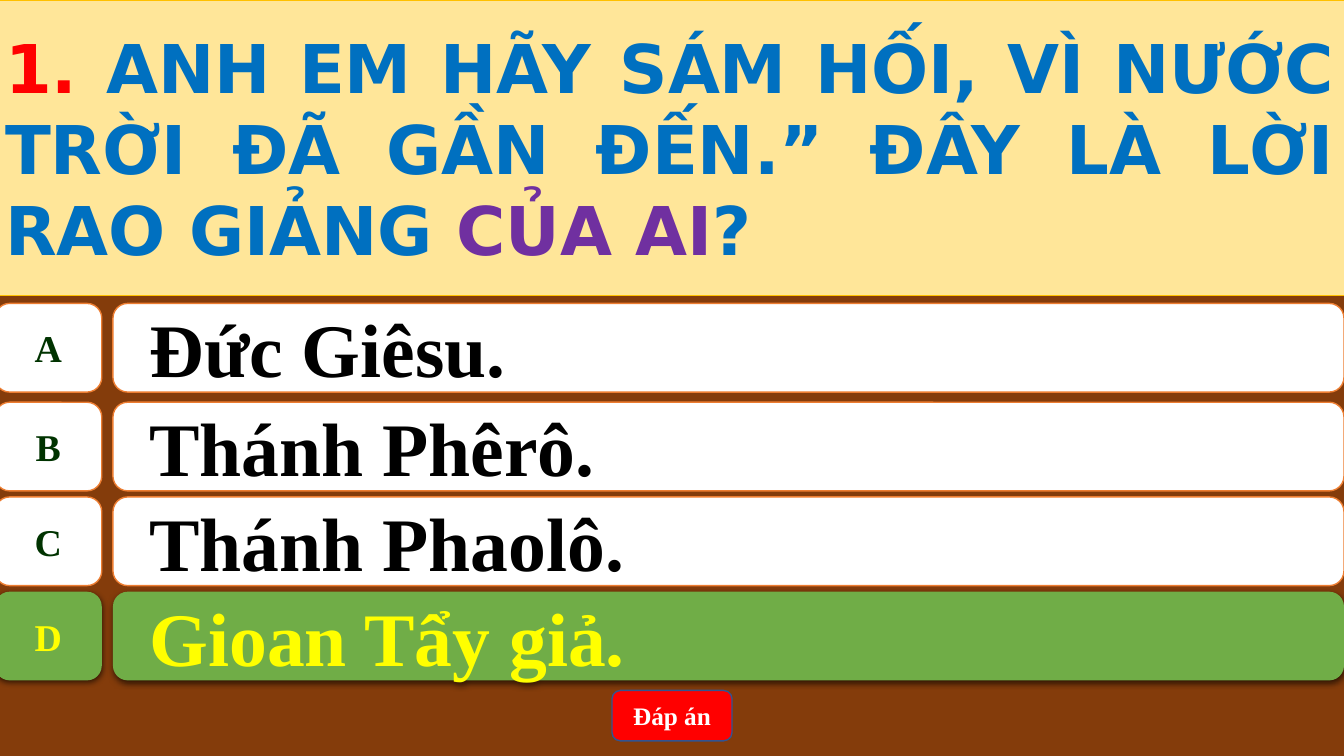
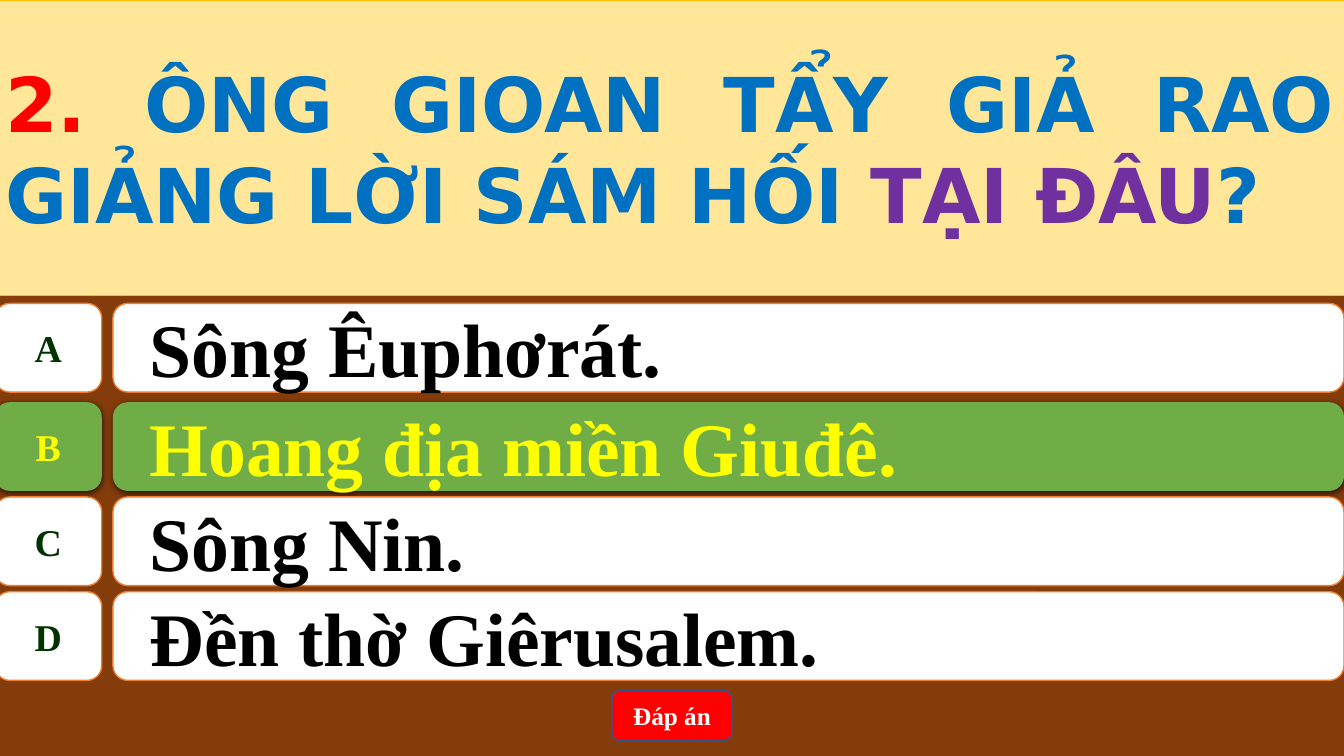
"""Build two multiple-choice quiz slides with the right answer highlighted."""
import pptx
import pptx.util
import pptx.dml.color
import pptx.enum.shapes
import pptx.enum.text
import lxml.etree
from pptx.util import Inches

MSO_SHAPE = pptx.enum.shapes.MSO_SHAPE
PP_ALIGN = pptx.enum.text.PP_ALIGN


class Theme:
    background = "843C0B"
    band, band_line = "FFE699", "FFC000"
    number, question, keyword = "FF0000", "0070C0", "7030A0"
    card, card_line = "FFFFFF", "ED7D31"
    letter, answer = "003300", "000000"
    right, right_text = "70AD47", "FFFF00"
    button, button_line, button_text = "FF0000", "325491", "FFFFFF"
    title_font, body_font = "DejaVu Sans", "Times New Roman"
    letter_size, answer_size, button_size = 27, 54, 18


def rgb(value):
    return pptx.dml.color.RGBColor.from_string(value)


def add_box(shapes, kind, box, fill, line, text, size, color, align):
    sp = shapes.add_shape(kind, *map(Inches, box))
    sp.shadow.inherit = False
    sp.fill.solid()
    sp.fill.fore_color.rgb = rgb(fill)
    if line:
        sp.line.color.rgb = rgb(line)
        sp.line.width = pptx.util.Pt(1)
    else:
        sp.line.fill.background()
    p = sp.text_frame.paragraphs[0]
    p.text = text
    p.alignment = align
    p.font.name = Theme.body_font
    p.font.size = pptx.util.Pt(size)
    p.font.bold = True
    p.font.color.rgb = rgb(color)
    return sp


QUESTIONS = [
    {
        "size": 48,
        "runs": [
            ("1. ", Theme.number),
            ("ANH EM HÃY SÁM HỐI, VÌ NƯỚC TRỜI ĐÃ GẦN ĐẾN.” ĐÂY LÀ LỜI RAO GIẢNG ", Theme.question),
            ("CỦA AI", Theme.keyword),
            ("?", Theme.question),
        ],
        "answers": ["Đức Giêsu.", "Thánh Phêrô.", "Thánh Phaolô.", "Gioan Tẩy giả."],
        "right": "D",
    },
    {
        "size": 54,
        "runs": [
            ("2. ", Theme.number),
            ("ÔNG GIOAN TẨY GIẢ RAO GIẢNG LỜI SÁM HỐI ", Theme.question),
            ("TẠI ĐÂU", Theme.keyword),
            ("?", Theme.question),
        ],
        "answers": ["Sông Êuphơrát.", "Hoang địa miền Giuđê.", "Sông Nin.", "Đền thờ Giêrusalem."],
        "right": "B",
    },
]
ROW_TOPS = [3.01, 3.99, 4.93, 5.87]
ROW_HEIGHT = 0.88
SHADOW = (
    '<a:outerShdw xmlns:a="http://schemas.openxmlformats.org/drawingml/2006/main" '
    'blurRad="57150" dist="19050" dir="5400000" algn="ctr" rotWithShape="0">'
    '<a:srgbClr val="000000"><a:alpha val="63000"/></a:srgbClr></a:outerShdw>'
)

prs = pptx.Presentation()
prs.slide_width, prs.slide_height = Inches(13.33), Inches(7.5)
prs.slide_master.background.fill.solid()
prs.slide_master.background.fill.fore_color.rgb = rgb(Theme.background)
layout = prs.slide_layouts.get_by_name("Title Only")

for question in QUESTIONS:
    s = prs.slides.add_slide(layout)

    title = s.shapes.title
    title.left, title.top = Inches(-0.05), Inches(0)
    title.width, title.height = Inches(13.39), Inches(2.93)
    title.fill.solid()
    title.fill.fore_color.rgb = rgb(Theme.band)
    title.line.color.rgb = rgb(Theme.band_line)
    title.line.width = pptx.util.Pt(0.5)
    tf = title.text_frame
    tf.auto_size = pptx.enum.text.MSO_AUTO_SIZE.NONE
    tf.vertical_anchor = pptx.enum.text.MSO_ANCHOR.MIDDLE
    p = tf.paragraphs[0]
    p.alignment = PP_ALIGN.JUSTIFY
    p.font.name = Theme.title_font
    p.font.size = pptx.util.Pt(question["size"])
    p.font.bold = True
    for text, color in question["runs"]:
        r = p.add_run()
        r.text = text
        r.font.color.rgb = rgb(color)

    for letter, answer, top in zip("ABCD", question["answers"], ROW_TOPS):
        is_right = letter == question["right"]
        fill = Theme.right if is_right else Theme.card
        line = None if is_right else Theme.card_line
        letter_color = Theme.right_text if is_right else Theme.letter
        answer_color = Theme.right_text if is_right else Theme.answer
        row = s.shapes.add_group_shape()
        tag = add_box(row.shapes, MSO_SHAPE.FLOWCHART_ALTERNATE_PROCESS,
                      (-0.05, top, 1.06, ROW_HEIGHT), fill, line,
                      letter, Theme.letter_size, letter_color, PP_ALIGN.CENTER)
        tag.text_frame.word_wrap = False
        bar = add_box(row.shapes, MSO_SHAPE.ROUNDED_RECTANGLE,
                      (1.12, top, 12.21, ROW_HEIGHT), fill, line,
                      answer, Theme.answer_size, answer_color, PP_ALIGN.LEFT)
        bar.text_frame.margin_left = Inches(0.32)
        if is_right:
            for sp in (tag, bar):
                effects = sp._element.spPr.find(pptx.oxml.ns.qn("a:effectLst"))
                effects.append(lxml.etree.fromstring(SHADOW))

    add_box(s.shapes, MSO_SHAPE.ROUNDED_RECTANGLE, (6.07, 6.85, 1.19, 0.5),
            Theme.button, Theme.button_line, "Đáp án",
            Theme.button_size, Theme.button_text, PP_ALIGN.CENTER)

prs.save("out.pptx")
